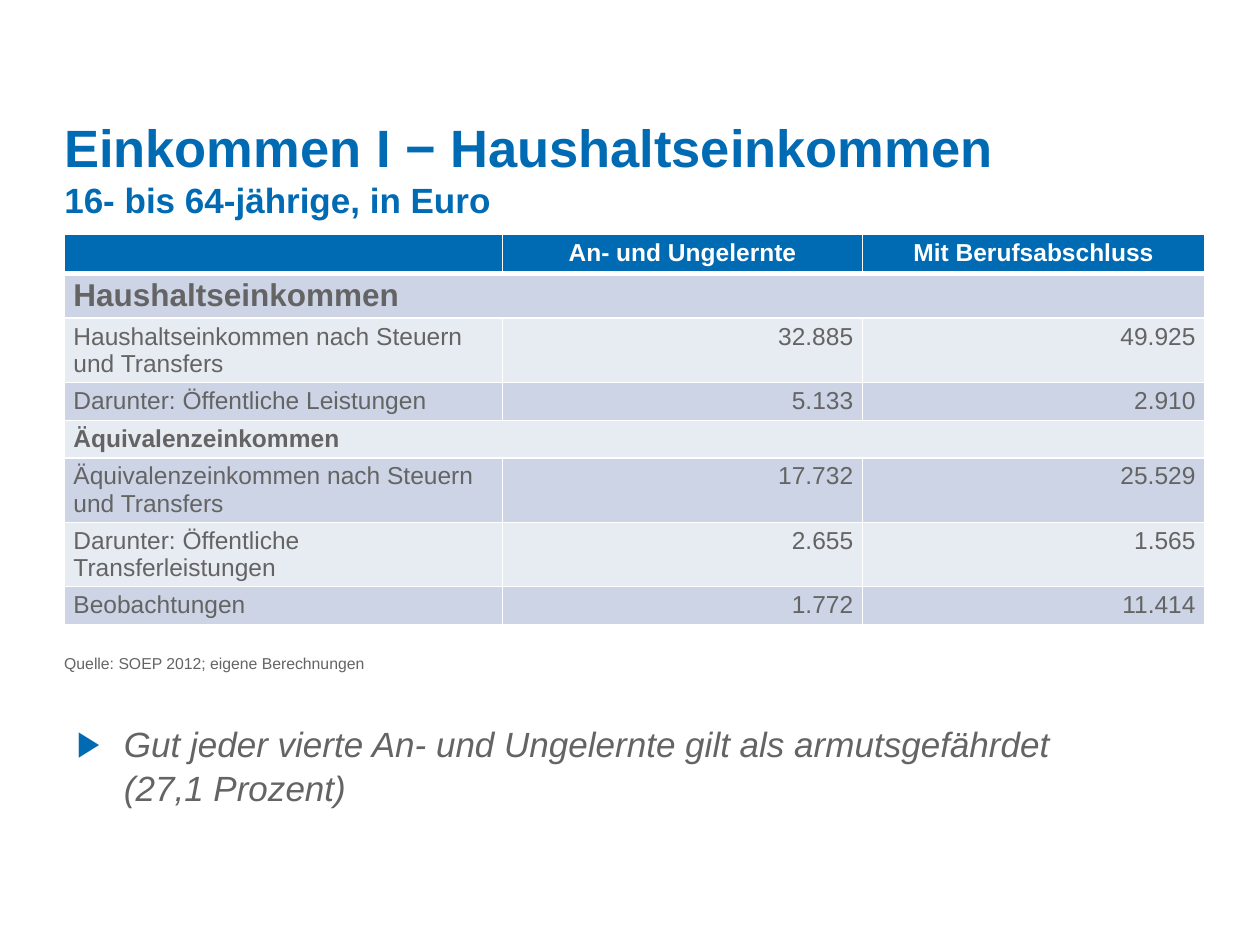
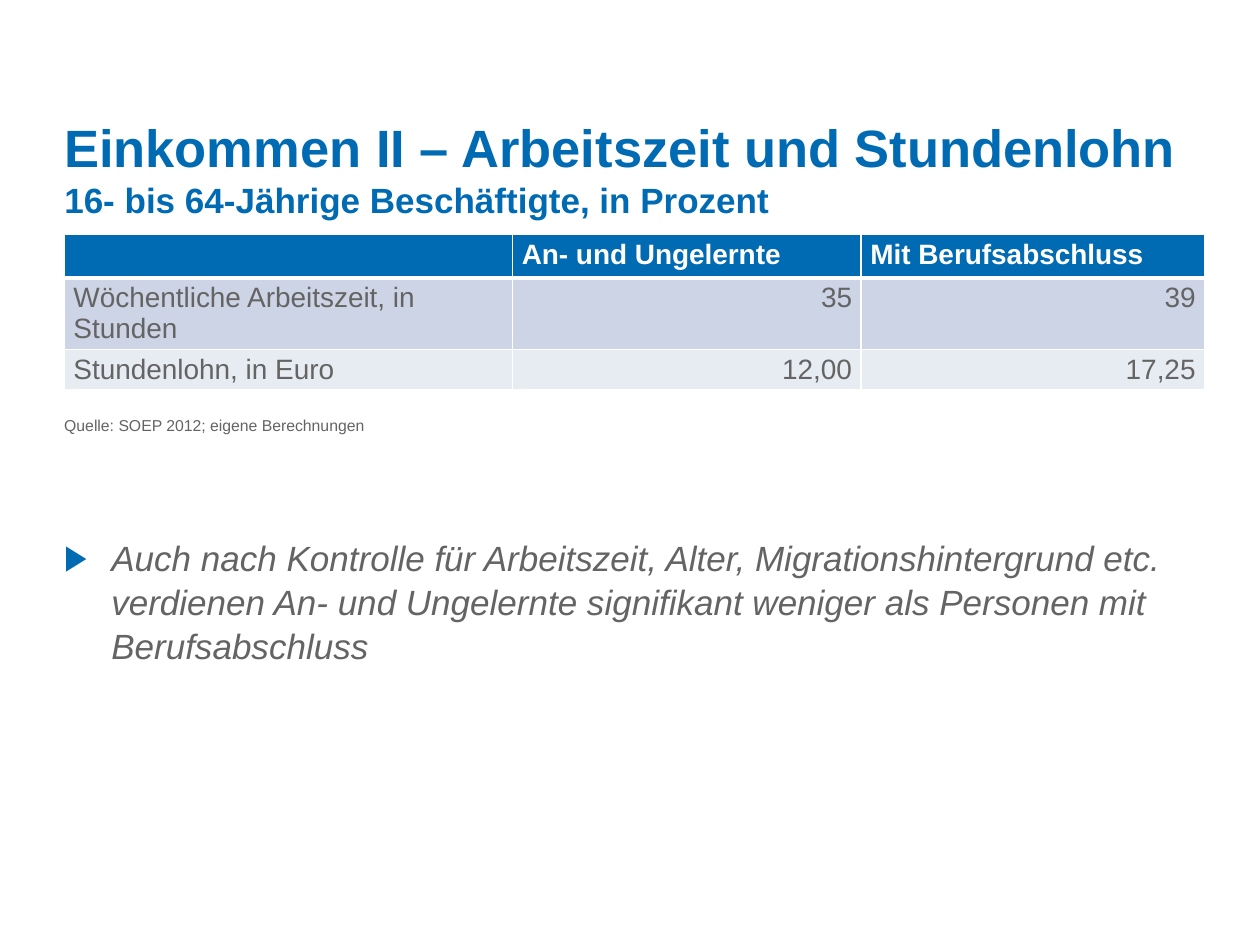
from lxml.etree import SubElement
from pptx import Presentation
from pptx.dml.color import RGBColor
from pptx.enum.text import MSO_ANCHOR, MSO_AUTO_SIZE, PP_ALIGN
from pptx.oxml.ns import qn
from pptx.util import Pt

BLUE = RGBColor(0x00, 0x6A, 0xB3)
GREY = RGBColor(0x64, 0x64, 0x64)
WHITE = RGBColor(0xFF, 0xFF, 0xFF)
BANDS = (RGBColor(0xCC, 0xD4, 0xE5), RGBColor(0xE7, 0xEB, 0xF2))
FONT = "Arial"

LEFT, WIDTH = 36.75, 652.3
TABLE_TOP, ROW_HEIGHT = 134, 21.6
HANGING = 26.9
SOURCE_NOTE = "Quelle: SOEP 2012; eigene Berechnungen"
HEADER = ("", "An- und Ungelernte", "Mit Berufsabschluss")

HOUSEHOLD_ROWS = (
    ("Haushaltseinkommen",),
    ("Haushaltseinkommen nach Steuern und Transfers", "32.885", "49.925"),
    ("Darunter: Öffentliche Leistungen", "5.133", "2.910"),
    ("Äquivalenzeinkommen",),
    ("Äquivalenzeinkommen nach Steuern und Transfers", "17.732", "25.529"),
    ("Darunter: Öffentliche Transferleistungen", "2.655", "1.565"),
    ("Beobachtungen", "1.772", "11.414"),
)
WAGE_ROWS = (
    ("Wöchentliche Arbeitszeit, in Stunden", "35", "39"),
    ("Stundenlohn, in Euro", "12,00", "17,25"),
)


def style_font(font, size, color, bold=False, italic=False):
    """Apply the common typeface with the given look."""
    font.name, font.size = FONT, Pt(size)
    font.bold, font.italic = bold, italic
    font.color.rgb = color


def clear_margins(frame):
    """Set all inner margins of a text frame to zero."""
    frame.margin_left = frame.margin_right = 0
    frame.margin_top = frame.margin_bottom = 0


def add_titled_slide(prs, heading, subheading):
    """Add a slide whose title has a large and a small line."""
    slide = prs.slides.add_slide(prs.slide_layouts[5])
    title = slide.shapes.title
    title.left, title.top = Pt(LEFT), Pt(65.5)
    title.width, title.height = Pt(WIDTH), Pt(60.5)
    frame = title.text_frame
    clear_margins(frame)
    frame.word_wrap = True
    frame.auto_size = MSO_AUTO_SIZE.NONE
    frame.vertical_anchor = MSO_ANCHOR.BOTTOM
    paragraph = frame.paragraphs[0]
    paragraph.alignment = PP_ALIGN.LEFT
    for text, size in ((heading, 30), (subheading, 20)):
        if paragraph.runs:
            paragraph.add_line_break()
        run = paragraph.add_run()
        run.text = text
        style_font(run.font, size, BLUE, bold=True)
    return slide


def set_borders(cell, top, bottom):
    """Draw white cell borders with the given top and bottom widths."""
    properties = cell._tc.get_or_add_tcPr()
    for side, width in (("L", 1), ("R", 1), ("T", top), ("B", bottom)):
        line = SubElement(properties, qn(f"a:ln{side}"), w=str(Pt(width)))
        fill = SubElement(line, qn("a:solidFill"))
        SubElement(fill, qn("a:srgbClr"), val=str(WHITE))


def fill_cell(cell, text, size, color, bold, alignment):
    """Write a cell's text, keeping an empty cell at the same text size."""
    cell.margin_left = cell.margin_right = Pt(5.25)
    cell.margin_top = cell.margin_bottom = Pt(2.65)
    paragraph = cell.text_frame.paragraphs[0]
    paragraph.alignment = alignment
    if text:
        paragraph.text = text
        style_font(paragraph.font, size, color, bold)
    else:
        SubElement(paragraph._p, qn("a:endParaRPr"), sz=str(size * 100))


def add_income_table(slide, rows, widths, size, header_alignment, section_sizes=()):
    """Add a banded table; a row with one entry is a section over all columns."""
    count = len(rows) + 1
    table = slide.shapes.add_table(
        count, len(widths), Pt(LEFT), Pt(TABLE_TOP), Pt(sum(widths)), Pt(ROW_HEIGHT * count)
    ).table
    for column, width in zip(table.columns, widths):
        column.width = Pt(width)
    section_size = iter(section_sizes)
    for r, entries in enumerate((HEADER, *rows)):
        is_header, is_section = r == 0, len(entries) == 1
        row_size = next(section_size) if is_section else size
        for c in range(len(widths)):
            cell = table.cell(r, c)
            set_borders(cell, 3 if r == 1 else 1, 3 if is_header else 1)
            cell.fill.solid()
            cell.fill.fore_color.rgb = BLUE if is_header else BANDS[(r - 1) % 2]
        if is_section:
            table.cell(r, 0).merge(table.cell(r, len(widths) - 1))
        for c, text in enumerate(entries):
            value_alignment = PP_ALIGN.RIGHT if c else PP_ALIGN.LEFT
            fill_cell(
                table.cell(r, c), text, row_size, WHITE if is_header else GREY,
                is_header or is_section,
                header_alignment if is_header else value_alignment,
            )


def add_text(slide, text, left, top, width, height):
    """Add a wrapping text box without margins and return its paragraph."""
    frame = slide.shapes.add_textbox(Pt(left), Pt(top), Pt(width), Pt(height)).text_frame
    clear_margins(frame)
    frame.word_wrap = True
    paragraph = frame.paragraphs[0]
    paragraph.text = text
    return paragraph


def add_source(slide, top):
    """Add the small source line below a table."""
    source = add_text(slide, SOURCE_NOTE, LEFT, top, WIDTH, 12)
    style_font(source.font, 9, GREY)


def add_finding(slide, text, left, top, height):
    """Add an italic key finding with a blue triangle bullet."""
    finding = add_text(slide, text, left, top, WIDTH, height)
    finding.line_spacing = 1.05
    properties = finding._p.get_or_add_pPr()
    properties.set("marL", str(Pt(HANGING)))
    properties.set("indent", str(-Pt(HANGING)))
    bullet_color = SubElement(properties, qn("a:buClr"))
    SubElement(bullet_color, qn("a:srgbClr"), val=str(BLUE))
    SubElement(properties, qn("a:buFont"), typeface=FONT)
    SubElement(properties, qn("a:buChar"), char="▶")
    style_font(finding.font, 20, GREY, italic=True)


def main():
    """Build both income slides and save them."""
    prs = Presentation()
    prs.slide_width, prs.slide_height = Pt(720), Pt(540)

    household = add_titled_slide(
        prs, "Einkommen I − Haushaltseinkommen", "16- bis 64-jährige, in Euro"
    )
    add_income_table(
        household, HOUSEHOLD_ROWS, (250.5, 205.6, 195.6), 14, PP_ALIGN.CENTER, (18, 14)
    )
    add_source(household, 373.7)
    add_finding(
        household,
        "Gut jeder vierte An- und Ungelernte gilt als armutsgefährdet\v(27,1 Prozent)",
        LEFT + 7.2, 411.8, 48.5,
    )

    wages = add_titled_slide(
        prs, "Einkommen II – Arbeitszeit und Stundenlohn",
        "16- bis 64-Jährige Beschäftigte, in Prozent",
    )
    add_income_table(wages, WAGE_ROWS, (256.2, 199.2, 196.3), 16, PP_ALIGN.LEFT)
    add_source(wages, 237.6)
    add_finding(
        wages,
        "Auch nach Kontrolle für Arbeitszeit, Alter, Migrationshintergrund etc. "
        "verdienen An- und Ungelernte signifikant weniger als Personen mit Berufsabschluss",
        LEFT, 305.3, 108.7,
    )

    prs.save("out.pptx")


if __name__ == "__main__":
    main()
